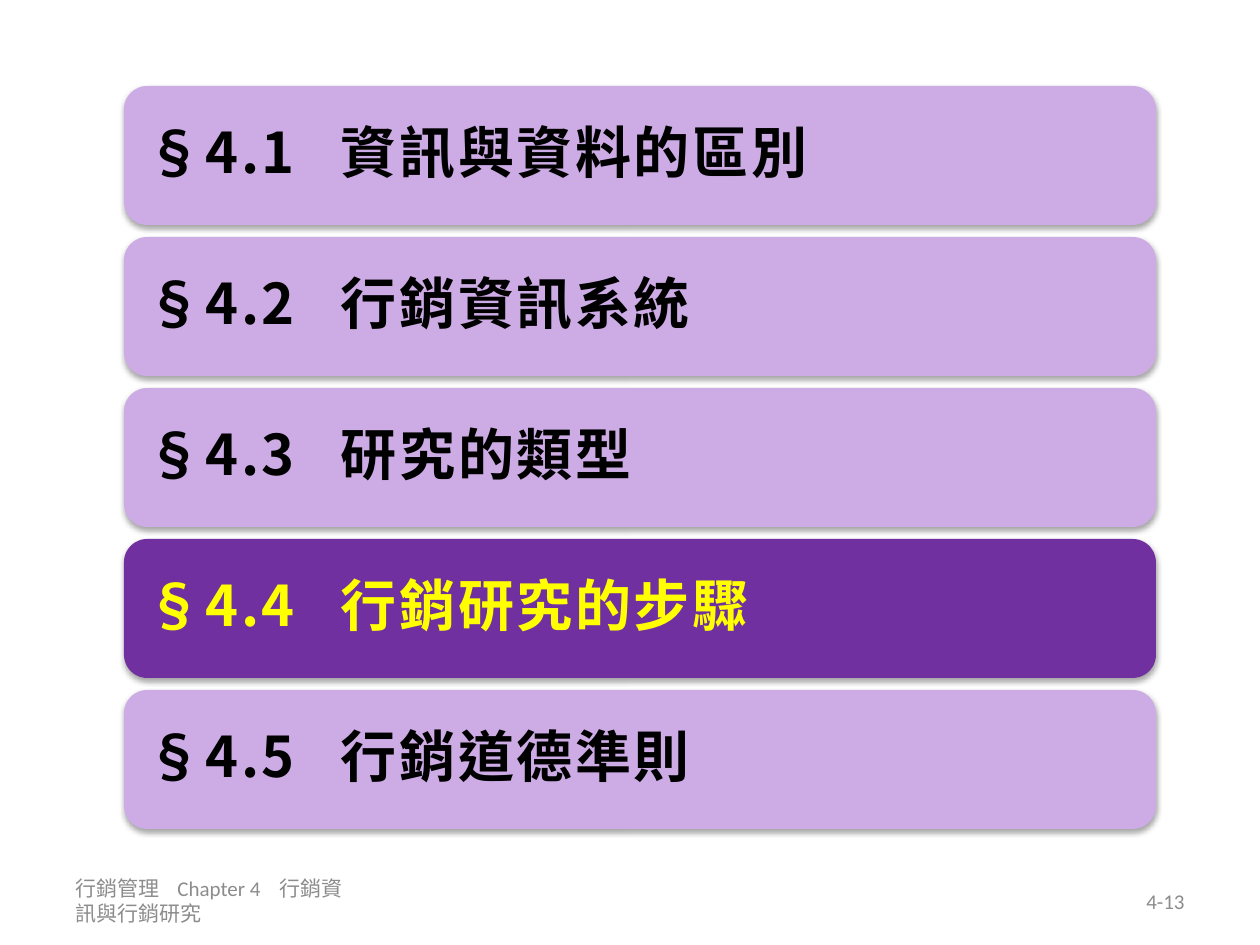
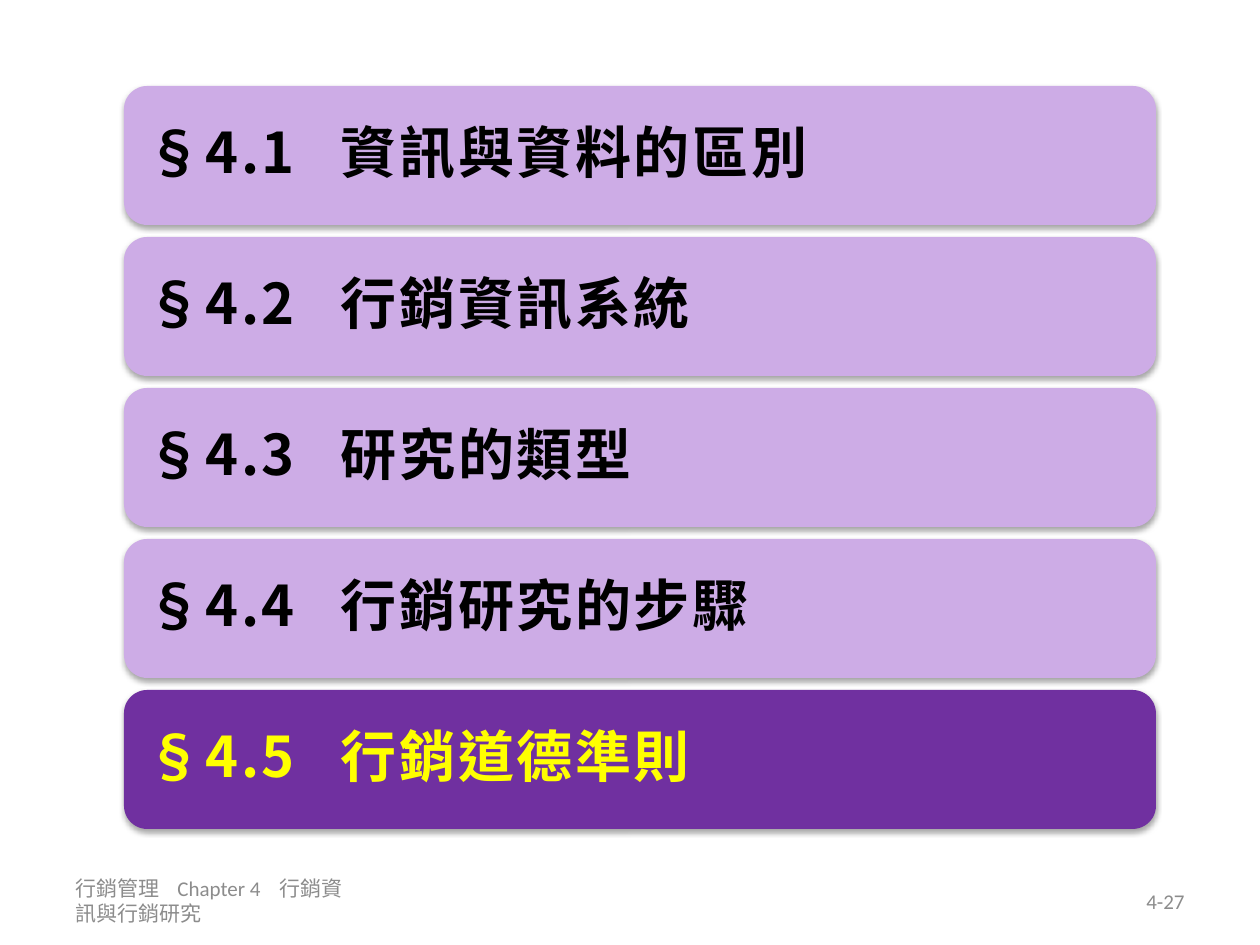
from lxml import etree
from pptx import Presentation, util as u
from pptx.dml.color import RGBColor
from pptx.enum import shapes, text
from pptx.oxml.ns import qn

# Content
TOPICS = [
    ("§4.1", "資訊與資料的區別"),
    ("§4.2", "行銷資訊系統"),
    ("§4.3", "研究的類型"),
    ("§4.4", "行銷研究的步驟"),
    ("§4.5", "行銷道德準則"),
]
FOOTER = ("行銷管理", "Chapter 4", "行銷資訊與行銷研究")
SLIDES = [("§4.4", "4-13"), ("§4.5", "4-27")]  # current topic, page

# Shared look
LILAC = RGBColor(0xCD, 0xAC, 0xE6)
PURPLE = RGBColor(0x70, 0x30, 0xA0)
YELLOW = RGBColor(0xFF, 0xFF, 0x00)
BLACK = RGBColor(0x00, 0x00, 0x00)
GREY = RGBColor(0x8C, 0x8C, 0x8C)
BAR_FONT = {"name": "Noto Sans CJK SC", "size": u.Pt(32), "bold": True}
FOOT_FONT = {"name": "Calibri", "size": u.Pt(12)}
LEFT, TOP, WIDTH, HEIGHT, PITCH = 124, 86, 1032, 139, 151
BAR_TABS, FOOT_TABS = [194], [102, 204]
INSET = 16
FOOT_TOP, FOOT_W, FOOT_H = 876, 294, 50
FOOT_X, PAGE_X = 63, 903


def px(n):
    return round(n * 914400 / 126)


def put(frame, words, look, color, tabs=(), align=text.PP_ALIGN.LEFT):
    """Write one line, with its parts set at tab stops."""
    frame.word_wrap = True
    frame.vertical_anchor = text.MSO_ANCHOR.MIDDLE
    para = frame.paragraphs[0]
    para.alignment = align
    if tabs:
        stops = etree.SubElement(para._p.get_or_add_pPr(), qn("a:tabLst"))
        for stop in tabs:
            etree.SubElement(stops, qn("a:tab"), pos=str(px(stop)), algn="l")
    run = para.add_run()
    run.text = "\t".join(words)
    for key, value in look.items():
        setattr(run.font, key, value)
    run.font.color.rgb = color
    return para, run


def shade(shape):
    """Give a soft shadow straight below."""
    shape.shadow.inherit = False
    effects = shape._element.spPr.find(qn("a:effectLst"))
    drop = etree.SubElement(effects, qn("a:outerShdw"), blurRad="40000",
                            dist="23000", dir="5400000", rotWithShape="0")
    tint = etree.SubElement(drop, qn("a:srgbClr"), val="000000")
    etree.SubElement(tint, qn("a:alpha"), val="35000")


def add_bar(slide, row, topic, active):
    bar = slide.shapes.add_shape(
        shapes.MSO_SHAPE.ROUNDED_RECTANGLE,
        px(LEFT), px(TOP + row * PITCH), px(WIDTH), px(HEIGHT))
    bar.fill.solid()
    bar.fill.fore_color.rgb = PURPLE if active else LILAC
    bar.line.fill.background()
    shade(bar)
    frame = bar.text_frame
    for side in ("left", "top", "right", "bottom"):
        setattr(frame, "margin_" + side, px(INSET))
    para, run = put(frame, topic, BAR_FONT, YELLOW if active else BLACK, BAR_TABS)
    para.line_spacing = 0.9
    para.space_after = u.Pt(11)
    # East Asian face and letter spacing
    props = run._r.get_or_add_rPr()
    props.set("lang", "zh-TW")
    props.set("spc", "150")
    etree.SubElement(props, qn("a:ea"), typeface=BAR_FONT["name"])


def add_foot(slide, left, words, **extra):
    box = slide.shapes.add_textbox(px(left), px(FOOT_TOP), px(FOOT_W), px(FOOT_H))
    para, run = put(box.text_frame, words, FOOT_FONT, GREY, **extra)
    run._r.get_or_add_rPr().set("lang", "zh-TW")


def main():
    deck = Presentation()
    deck.slide_width, deck.slide_height = px(1260), px(945)
    for current, page in SLIDES:
        slide = deck.slides.add_slide(deck.slide_layouts[6])
        add_foot(slide, FOOT_X, FOOTER, tabs=FOOT_TABS)
        add_foot(slide, PAGE_X, [page], align=text.PP_ALIGN.RIGHT)
        for row, topic in enumerate(TOPICS):
            add_bar(slide, row, topic, topic[0] == current)
    deck.save("out.pptx")


if __name__ == "__main__":
    main()
